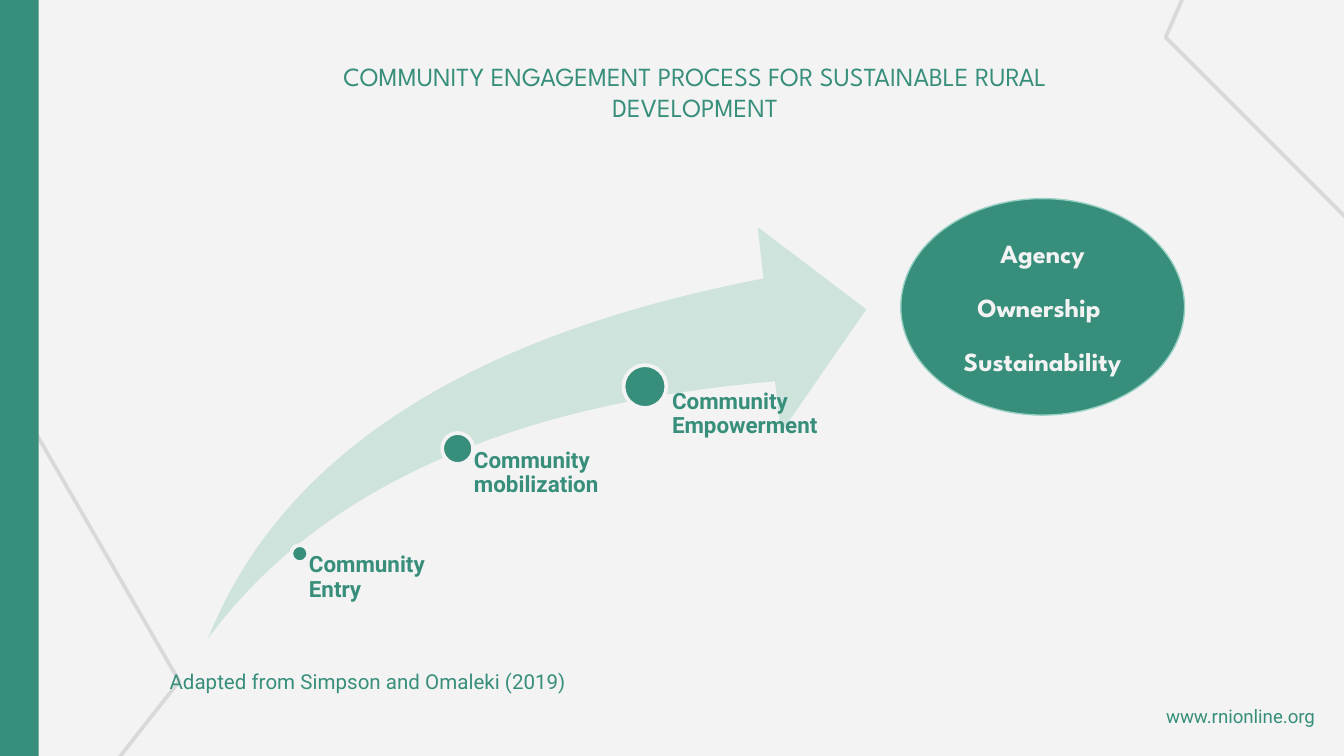
from typing import NamedTuple

from pptx import Presentation
from pptx.dml.color import RGBColor
from pptx.enum.shapes import MSO_SHAPE as Preset
from pptx.enum.text import MSO_ANCHOR as Anchor, PP_ALIGN as Align
from pptx.util import Pt

GREEN, MINT, PALE, GREY, EDGE = "378E7B", "CDE3DB", "F3F3F3", "D9D9D9", "97CFC3"
HEADING, BODY = "League Spartan", "Roboto"


class Area(NamedTuple):
    left: float
    top: float
    width: float
    height: float


class Style(NamedTuple):
    font: str
    size: float
    color: str = GREEN
    bold: bool = False
    align: Align = Align.LEFT
    line_spacing: float = 1.0
    space_after: float = 0


class Caption(NamedTuple):
    text: str
    area: Area
    style: Style


class Stage(NamedTuple):
    text: str
    dot: Area
    label: Area
    indent: float


def color(code: str) -> RGBColor:
    return RGBColor.from_string(code)


def write(shape, text: str, style: Style) -> None:
    frame = shape.text_frame
    frame.word_wrap = True
    frame.text = text
    for para in frame.paragraphs:
        para.alignment = style.align
        para.line_spacing = style.line_spacing
        para.space_after = Pt(style.space_after)
        for span in para.runs:
            span.font.name = style.font
            span.font.size = Pt(style.size)
            span.font.bold = style.bold
            span.font.color.rgb = color(style.color)


def add_text(page, caption: Caption, insets: tuple = (7.2, 7.2, 7.2, 7.2)) -> None:
    box = page.shapes.add_textbox(*map(Pt, caption.area))
    frame = box.text_frame
    frame.margin_left, frame.margin_top, frame.margin_right, frame.margin_bottom = map(Pt, insets)
    frame.vertical_anchor = Anchor.TOP
    write(box, caption.text, caption.style)


def add_preset(page, preset: Preset, area: Area, fill: str, line: str = "", weight: float = 0):
    shape = page.shapes.add_shape(preset, *map(Pt, area))
    shape.shadow.inherit = False
    shape.fill.solid()
    shape.fill.fore_color.rgb = color(fill)
    if line:
        shape.line.color.rgb = color(line)
        shape.line.width = Pt(weight)
    else:
        shape.line.fill.background()
    return shape


def add_bent_line(page, points: list) -> None:
    start, *others = [(Pt(x), Pt(y)) for x, y in points]
    builder = page.shapes.build_freeform(*start)
    builder.add_line_segments(others, close=False)
    shape = builder.convert_to_shape()
    shape.shadow.inherit = False
    shape.fill.background()
    shape.line.color.rgb = color(GREY)
    shape.line.width = Pt(2)


BENT_LINES = [
    [(-13.5, 175.5), (96, 365), (27.5, 452)],
    [(779.5, 175), (624.5, 20), (668.5, -81.5)],
]
CAPTIONS = [
    Caption("COMMUNITY ENGAGEMENT PROCESS FOR SUSTAINABLE RURAL DEVELOPMENT",
            Area(160.5, 25.2, 424, 28.8), Style(HEADING, 14, align=Align.CENTER)),
    Caption("www.rnionline.org", Area(584.6, 371.5, 160, 27.4),
            Style(BODY, 10, align=Align.CENTER)),
    Caption("Adapted from Simpson and Omaleki (2019) ", Area(65.5, 352, 247.7, 36),
            Style(BODY, 11, align=Align.RIGHT)),
]
STAGES = [
    Stage("Community Entry", Area(156, 292, 9.2, 9.2), Area(160.5, 296.6, 82, 63.4), 5),
    Stage("Community mobilization", Area(236.9, 232, 16.6, 16.6), Area(245.3, 240.5, 85, 120), 8.6),
    Stage("Community Empowerment", Area(334, 195.6, 23, 23), Area(347.8, 208.8, 110, 153.4), 12.2),
]
STAGE_STYLE = Style(BODY, 12, bold=True, line_spacing=0.9)
OUTCOMES = "Agency\nOwnership \nSustainability"


def main() -> None:
    deck = Presentation()
    deck.slide_width, deck.slide_height = Pt(720), Pt(405)
    page = deck.slides.add_slide(deck.slide_layouts[6])
    page.background.fill.solid()
    page.background.fill.fore_color.rgb = color(PALE)

    # Background lines and side band
    for points in BENT_LINES:
        add_bent_line(page, points)
    add_preset(page, Preset.RECTANGLE, Area(0, 0, 20.8, 414), GREEN)

    # Rising arrow with its stages
    arrow = add_preset(page, Preset.SWOOSH_ARROW, Area(111.5, 121.7, 352.6, 220.3), MINT)
    arrow.adjustments[0] = arrow.adjustments[1] = 0.25
    for stage in STAGES:
        add_preset(page, Preset.OVAL, stage.dot, GREEN, PALE, 2)
        add_text(page, Caption(stage.text, stage.label, STAGE_STYLE), (stage.indent, 0, 0, 0))

    # Outcomes
    goal = add_preset(page, Preset.OVAL, Area(482.6, 106.4, 152, 116), GREEN, EDGE, 0.75)
    goal.text_frame.vertical_anchor = Anchor.MIDDLE
    write(goal, OUTCOMES, Style(HEADING, 14, PALE, True, Align.CENTER, space_after=12))

    # Title, web address and source
    for caption in CAPTIONS:
        add_text(page, caption)

    deck.save("out.pptx")


if __name__ == "__main__":
    main()
